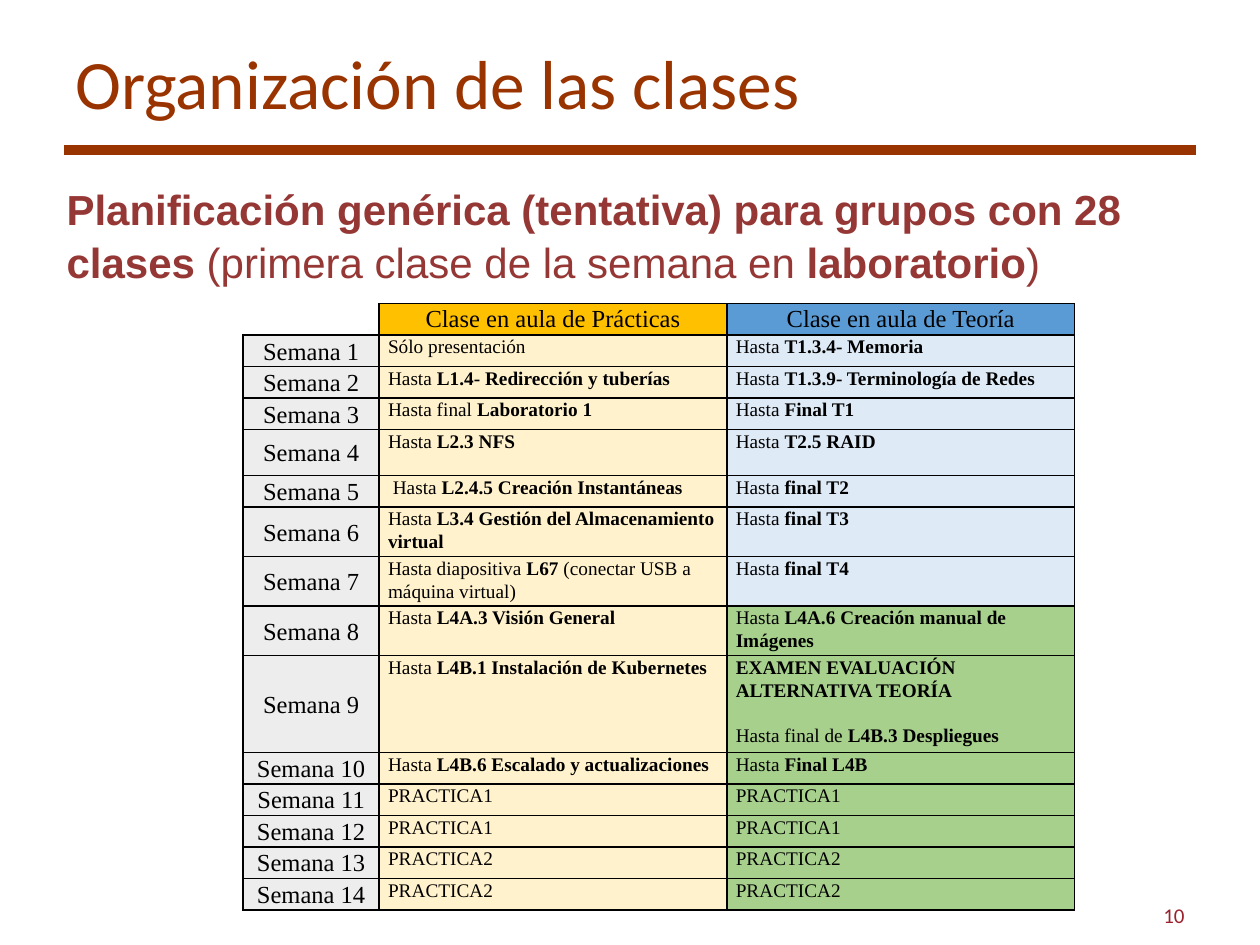
from dataclasses import dataclass

from lxml import etree
from pptx import Presentation
from pptx.dml.color import RGBColor
from pptx.enum.shapes import MSO_CONNECTOR
from pptx.enum.text import MSO_ANCHOR, PP_ALIGN
from pptx.oxml.ns import qn
from pptx.util import Inches, Pt

STRAIGHT = MSO_CONNECTOR.STRAIGHT
TOP, MIDDLE = MSO_ANCHOR.TOP, MSO_ANCHOR.MIDDLE
LEFT, CENTER, RIGHT = PP_ALIGN.LEFT, PP_ALIGN.CENTER, PP_ALIGN.RIGHT


@dataclass(frozen=True)
class Theme:
    title: str = "993300"
    body: str = "953735"
    number: str = "9B212C"
    ink: str = "000000"
    lab_head: str = "FFC000"
    theory_head: str = "5B9BD5"
    week: str = "EDEDED"
    lab: str = "FFF2CC"
    theory: str = "DEEAF6"
    late_theory: str = "A8D08D"
    heading_font: str = "Calibri"
    body_font: str = "Arial"
    table_font: str = "Times New Roman"
    title_size: float = 39.6
    body_size: float = 24
    number_size: float = 12
    label_size: float = 14
    cell_size: float = 11


THEME = Theme()
WIDTH, HEIGHT = 10, 7.5
COLUMNS = (1.08, 2.76, 2.76)
LINE_ROW, TWO_LINE_ROW, FOUR_LINE_ROW = 0.23, 0.365, 0.73
FIRST_LATE_WEEK = 8
HEADINGS = ("Clase en aula de Prácticas", "Clase en aula de Teoría")
# Double asterisks enclose bold text; a line break starts a new paragraph.
WEEKS = [
    ("Sólo presentación", "Hasta **T1.3.4- Memoria**", LINE_ROW),
    ("Hasta **L1.4- Redirección y tuberías**",
     "Hasta **T1.3.9- Terminología de Redes**", LINE_ROW),
    ("Hasta final **Laboratorio 1**", "Hasta **Final T1**", LINE_ROW),
    ("Hasta **L2.3 NFS**", "Hasta **T2.5 RAID**", TWO_LINE_ROW),
    (" Hasta **L2.4.5 Creación Instantáneas**", "Hasta **final T2**", LINE_ROW),
    ("Hasta **L3.4 Gestión del Almacenamiento virtual**",
     "Hasta **final T3**", TWO_LINE_ROW),
    ("Hasta diapositiva **L67** (conectar USB a máquina virtual)",
     "Hasta **final T4**", TWO_LINE_ROW),
    ("Hasta **L4A.3 Visión General**",
     "Hasta **L4A.6 Creación manual de Imágenes**", TWO_LINE_ROW),
    ("Hasta **L4B.1 Instalación de Kubernetes**",
     "**EXAMEN EVALUACIÓN ALTERNATIVA TEORÍA**\n"
     "Hasta final de **L4B.3 Despliegues**", FOUR_LINE_ROW),
    ("Hasta **L4B.6 Escalado y actualizaciones**", "Hasta **Final L4B**", LINE_ROW),
    *[(task, task, LINE_ROW) for task in ("PRACTICA1", "PRACTICA2") for _ in range(2)],
]


def write_text(frame, text, font, size, color, align=LEFT, spacing=1.0, gap=0):
    """Fill a text frame with paragraphs, setting the marked parts in bold."""
    for index, line in enumerate(text.split("\n")):
        para = frame.add_paragraph() if index else frame.paragraphs[0]
        para.alignment = align
        para.line_spacing = spacing
        if index:
            para.space_before = Pt(gap)
        for part, words in enumerate(line.split("**")):
            if words:
                span = para.add_run()
                span.text = words
                span.font.name = font
                span.font.size = Pt(size)
                span.font.bold = part % 2 == 1
                span.font.color.rgb = RGBColor.from_string(color)


def add_text(page, place, text, font, size, color, anchor=TOP, align=LEFT, spacing=1.0):
    box = page.shapes.add_textbox(*[Inches(length) for length in place])
    frame = box.text_frame
    frame.word_wrap = True
    frame.vertical_anchor = anchor
    write_text(frame, text, font, size, color, align, spacing)


def add_rule(page, left, right, height):
    rule = page.shapes.add_connector(
        STRAIGHT, Inches(left), Inches(height), Inches(right), Inches(height))
    rule.line.color.rgb = RGBColor.from_string(THEME.title)
    rule.line.width = Pt(6)
    etree.SubElement(rule._element.spPr, qn("a:effectLst"))


def set_borders(cell, hidden=()):
    properties = cell._tc.get_or_add_tcPr()
    for index, side in enumerate(("lnL", "lnR", "lnT", "lnB")):
        border = etree.Element(qn(f"a:{side}"), w=str(Pt(1)))
        if side in hidden:
            etree.SubElement(border, qn("a:noFill"))
        else:
            fill = etree.SubElement(border, qn("a:solidFill"))
            etree.SubElement(fill, qn("a:srgbClr"), val=THEME.ink)
        properties.insert(index, border)


def fill_cell(cell, text, color, size=THEME.cell_size, align=LEFT, anchor=TOP):
    cell.margin_left = cell.margin_right = Inches(0.07)
    cell.margin_top = cell.margin_bottom = 0
    cell.vertical_anchor = anchor
    cell.fill.solid()
    cell.fill.fore_color.rgb = RGBColor.from_string(color)
    write_text(cell.text_frame, text, THEME.table_font, size, THEME.ink,
               align, spacing=1.07, gap=13)
    set_borders(cell)


def clear_corner(cell):
    cell.margin_top = cell.margin_bottom = 0
    cell.fill.background()
    etree.SubElement(cell.text_frame.paragraphs[0]._p, qn("a:endParaRPr"),
                     sz=str(THEME.cell_size * 100))
    set_borders(cell, hidden=("lnL", "lnT"))


def add_schedule(page, left, top):
    heights = [LINE_ROW] + [height for _, _, height in WEEKS]
    frame = page.shapes.add_table(
        len(heights), len(COLUMNS), Inches(left), Inches(top),
        Inches(sum(COLUMNS)), Inches(sum(heights)))
    table = frame.table
    table.first_row = table.horz_banding = False
    for column, width in zip(table.columns, COLUMNS):
        column.width = Inches(width)
    for row, height in zip(table.rows, heights):
        row.height = Inches(height)

    clear_corner(table.cell(0, 0))
    head_colors = (THEME.lab_head, THEME.theory_head)
    for column, (heading, color) in enumerate(zip(HEADINGS, head_colors), start=1):
        fill_cell(table.cell(0, column), heading, color, THEME.label_size, CENTER)
    for week, (lab, theory, _) in enumerate(WEEKS, start=1):
        theory_color = THEME.late_theory if week >= FIRST_LATE_WEEK else THEME.theory
        fill_cell(table.cell(week, 0), f"Semana {week}", THEME.week,
                  THEME.label_size, CENTER, MIDDLE)
        fill_cell(table.cell(week, 1), lab, THEME.lab)
        fill_cell(table.cell(week, 2), theory, theory_color)


def main():
    deck = Presentation()
    deck.slide_width, deck.slide_height = Inches(WIDTH), Inches(HEIGHT)
    page = deck.slides.add_slide(deck.slide_layouts[6])
    add_rule(page, 0.51, WIDTH - 0.51, 1.19)
    add_text(page, (0.5, 0.3, 9, 0.69), "Organización de las clases",
             THEME.heading_font, THEME.title_size, THEME.title, MIDDLE)
    add_text(page, (7.17, 7.06, 2.33, 0.4), "10",
             THEME.heading_font, THEME.number_size, THEME.number, MIDDLE, RIGHT)
    add_text(page, (0.43, 1.39, 9.45, 1.23),
             "**Planificación genérica (tentativa) para grupos con 28 clases**"
             " (primera clase de la semana en **laboratorio**)",
             THEME.body_font, THEME.body_size, THEME.body, spacing=1.05)
    add_schedule(page, 1.93, 2.41)
    deck.save("out.pptx")


if __name__ == "__main__":
    main()
